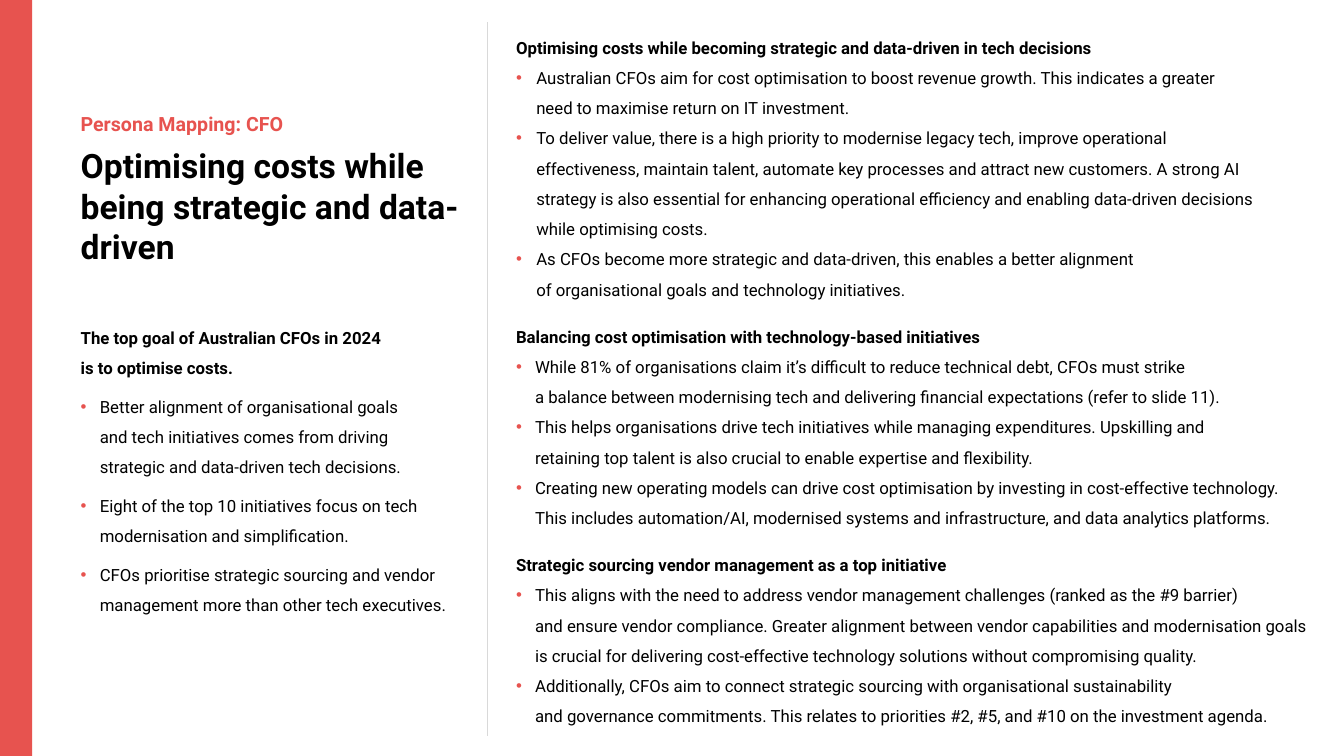
"""Builds the CFO persona mapping slide."""
from lxml import etree
from pptx import Presentation
from pptx.dml.color import RGBColor
from pptx.enum.shapes import MSO_CONNECTOR, MSO_SHAPE
from pptx.enum.text import MSO_ANCHOR, MSO_AUTO_SIZE, PP_ALIGN
from pptx.oxml.ns import qn
from pptx.util import Cm, Pt

RECTANGLE = MSO_SHAPE.RECTANGLE
STRAIGHT = MSO_CONNECTOR.STRAIGHT
TOP = MSO_ANCHOR.TOP
FIXED_SIZE = MSO_AUTO_SIZE.NONE
LEFT = PP_ALIGN.LEFT

FONT = "Roboto"
CORAL = "E7534F"
BLACK = "000000"
GREY = "D9D9D9"
TWO_CONTENT_LAYOUT = 3

GOAL_HEADING = "The top goal of Australian CFOs in 2024 \nis to optimise costs."
GOAL_POINTS = [
    "Better alignment of organisational goals \nand tech initiatives comes from driving \n"
    "strategic and data-driven tech decisions.",
    "Eight of the top 10 initiatives focus on tech modernisation and simplification.",
    "CFOs prioritise strategic sourcing and vendor management more than other tech executives.",
]
SECTIONS = [
    ("Optimising costs while becoming strategic and data-driven in tech decisions", 0.51, [
        "Australian CFOs aim for cost optimisation to boost revenue growth. "
        "This indicates a greater \nneed to maximise return on IT investment.",
        "To deliver value, there is a high priority to modernise legacy tech, improve operational \n"
        "effectiveness, maintain talent, automate key processes and attract new customers. "
        "A strong AI \nstrategy is also essential for enhancing operational efficiency and "
        "enabling data-driven decisions \nwhile optimising costs.",
        "As CFOs become more strategic and data-driven, this enables a better alignment \n"
        "of organisational goals and technology initiatives.",
    ]),
    ("Balancing cost optimisation with technology-based initiatives", 0.48, [
        "While 81% of organisations claim it’s difficult to reduce technical debt, "
        "CFOs must strike \na balance between modernising tech and delivering financial "
        "expectations (refer to slide 11).",
        "This helps organisations drive tech initiatives while managing expenditures. "
        "Upskilling and \nretaining top talent is also crucial to enable expertise and flexibility.",
        "Creating new operating models can drive cost optimisation by investing in "
        "cost-effective technology. This includes automation/AI, modernised systems and "
        "infrastructure, and data analytics platforms.",
    ]),
    ("Strategic sourcing vendor management as a top initiative", 0.48, [
        "This aligns with the need to address vendor management challenges "
        "(ranked as the #9 barrier) \nand ensure vendor compliance. Greater alignment between "
        "vendor capabilities and modernisation goals is crucial for delivering cost-effective "
        "technology solutions without compromising quality.",
        "Additionally, CFOs aim to connect strategic sourcing with organisational sustainability \n"
        "and governance commitments. This relates to priorities #2, #5, and #10 on the "
        "investment agenda.",
    ]),
]


def colour(hex_code):
    return RGBColor.from_string(hex_code)


def place(box, left, top, width, height):
    box.left, box.top, box.width, box.height = Cm(left), Cm(top), Cm(width), Cm(height)
    frame = box.text_frame
    frame.word_wrap = True
    frame.auto_size = FIXED_SIZE
    frame.vertical_anchor = TOP
    return frame


def set_bullet(para, indent):
    properties = para._p.get_or_add_pPr()
    properties.set("marL", str(Cm(indent)))
    properties.set("indent", str(-Cm(indent)))
    if indent:
        bullet_colour = etree.SubElement(properties, qn("a:buClr"))
        etree.SubElement(bullet_colour, qn("a:srgbClr"), val=CORAL)
        etree.SubElement(properties, qn("a:buChar"), char="•")
    else:
        etree.SubElement(properties, qn("a:buNone"))


def add_para(frame, text, size, bold, hex_code=BLACK, indent=0, spacing=1.0, after=0):
    para = frame.add_paragraph() if frame.text else frame.paragraphs[0]
    para.text = text
    set_bullet(para, indent)
    para.alignment = LEFT
    para.line_spacing = spacing
    para.space_before = Pt(0)
    para.space_after = Pt(after)
    para.font.name = FONT
    para.font.size = Pt(size)
    para.font.bold = bold
    para.font.color.rgb = colour(hex_code)


def add_section(frame, heading, points, indent, gap, end_gap):
    add_para(frame, heading, 12, True, spacing=1.5, after=gap)
    for point in points:
        after = end_gap if point is points[-1] else gap
        add_para(frame, point, 12, False, indent=indent, spacing=1.5, after=after)


def add_side_band(page):
    band = page.shapes.add_shape(RECTANGLE, 0, 0, Cm(0.81), Cm(19.05))
    band.shadow.inherit = False
    band.fill.solid()
    band.fill.fore_color.rgb = colour(CORAL)
    band.line.fill.background()


def add_divider(page):
    divider = page.shapes.add_connector(STRAIGHT, Cm(12.27), Cm(18.54), Cm(12.27), Cm(0.56))
    divider.line.color.rgb = colour(GREY)
    divider.line.width = Pt(0.5)
    etree.SubElement(divider._element.spPr, qn("a:effectLst"))


def main():
    deck = Presentation()
    deck.slide_width, deck.slide_height = Cm(33.87), Cm(19.05)
    page = deck.slides.add_slide(deck.slide_layouts[TWO_CONTENT_LAYOUT])
    title, goal_box, detail_box = page.placeholders

    add_side_band(page)
    add_divider(page)

    label_box = page.shapes.add_textbox(0, 0, 0, 0)
    label = place(label_box, 1.78, 2.69, 11.48, 0.86)
    add_para(label, "Persona Mapping: CFO", 14, True, CORAL)
    heading = place(title, 1.78, 3.53, 10.46, 3.33)
    add_para(heading, "Optimising costs while being strategic and data-driven", 24, True)

    goal = place(goal_box, 1.78, 7.87, 10.46, 7.72)
    add_section(goal, GOAL_HEADING, GOAL_POINTS, 0.48, gap=6, end_gap=6)

    detail = place(detail_box, 12.75, 0.56, 20.57, 17.96)
    for section_heading, indent, points in SECTIONS:
        add_section(detail, section_heading, points, indent, gap=0, end_gap=12)

    deck.save("out.pptx")


if __name__ == "__main__":
    main()
